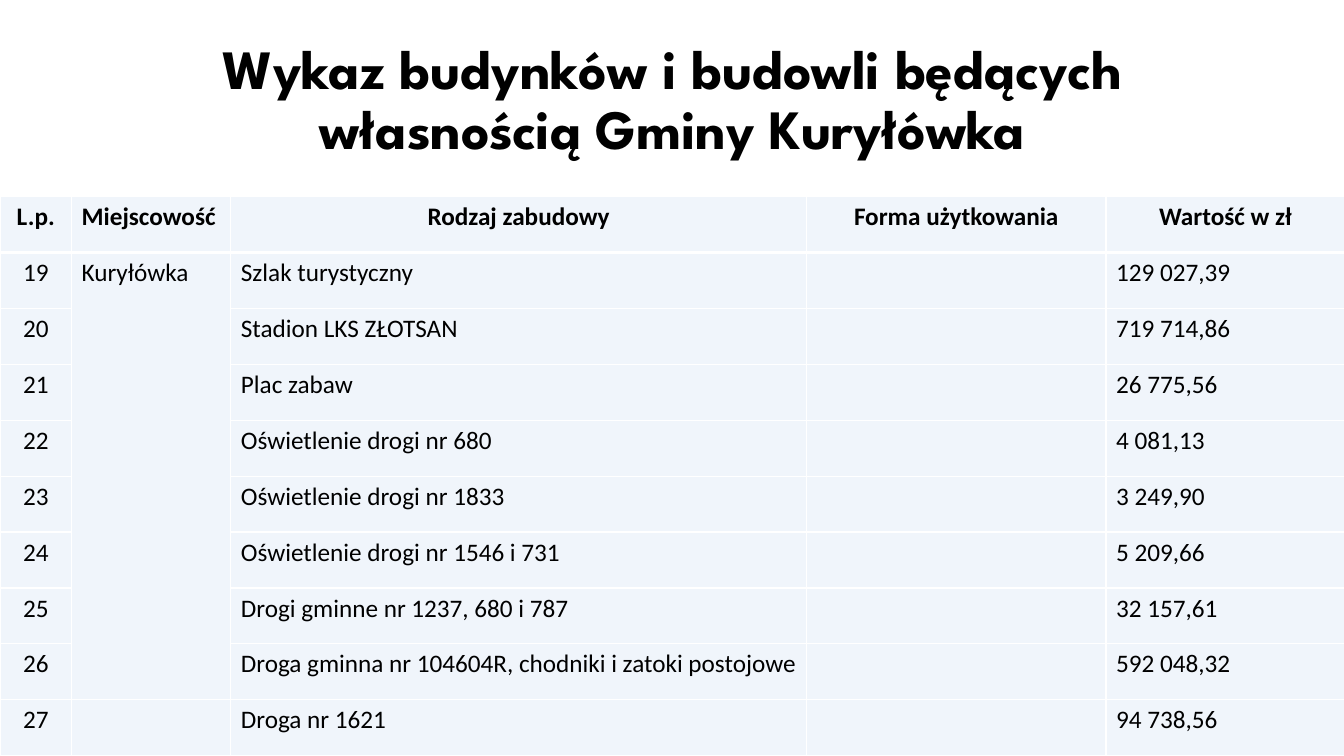
from lxml.etree import SubElement
from pptx import Presentation
from pptx.dml.color import RGBColor
from pptx.enum.text import MSO_ANCHOR, PP_ALIGN
from pptx.oxml.ns import qn
from pptx.util import Inches, Pt


def write(tf, text, size=18, font="Calibri", color="000000", bold=False,
          align=PP_ALIGN.LEFT, spacing=None):
    p = tf.paragraphs[0]
    p.alignment = align
    p.line_spacing = spacing
    r = p.add_run()
    r.text = text
    r.font.size = Pt(size)
    r.font.name = font
    r.font.bold = bold
    r.font.color.rgb = RGBColor.from_string(color)


def style_cell(cell, fill, alpha, border, bottom_width):
    tc_pr = cell._tc.get_or_add_tcPr()
    for side in ("L", "R", "T", "B"):
        width = bottom_width if side == "B" else 1
        ln = SubElement(tc_pr, qn(f"a:ln{side}"), w=str(Pt(width)))
        solid = SubElement(ln, qn("a:solidFill"))
        SubElement(solid, qn("a:srgbClr"), val=border)
    solid = SubElement(tc_pr, qn("a:solidFill"))
    clr = SubElement(solid, qn("a:srgbClr"), val=fill)
    SubElement(clr, qn("a:alpha"), val=str(alpha * 1000))


prs = Presentation()
prs.slide_width = Inches(13.33)
prs.slide_height = Inches(7.5)
s = prs.slides.add_slide(prs.slide_layouts[6])

title = s.shapes.add_textbox(Inches(0.92), Inches(0.28), Inches(11.5), Inches(1.45))
tf = title.text_frame
tf.word_wrap = True
tf.vertical_anchor = MSO_ANCHOR.MIDDLE
write(tf, "Wykaz budynków i budowli będących własnością Gminy Kuryłówka",
      size=39.6, font="League Spartan", bold=True, align=PP_ALIGN.CENTER, spacing=0.9)

headers = ["L.p.", "Miejscowość", "Rodzaj zabudowy", "Forma użytkowania", "Wartość w zł"]
widths = [0.71, 1.58, 5.71, 2.97, 2.37]
first_number = 19
buildings = [
    ("Szlak turystyczny", "129 027,39"),
    ("Stadion LKS ZŁOTSAN", "719 714,86"),
    ("Plac zabaw", "26 775,56"),
    ("Oświetlenie drogi nr 680", "4 081,13"),
    ("Oświetlenie drogi nr 1833", "3 249,90"),
    ("Oświetlenie drogi nr 1546 i 731", "5 209,66"),
    ("Drogi gminne nr 1237, 680 i 787", "32 157,61"),
    ("Droga gminna nr 104604R, chodniki i zatoki postojowe", "592 048,32"),
    ("Droga nr 1621", "94 738,56"),
]
rows = [headers]
for number, (kind, value) in enumerate(buildings, first_number):
    place = "Kuryłówka" if number == first_number else ""
    rows.append([str(number), place, kind, "", value])

table = s.shapes.add_table(len(rows), len(headers), Inches(0), Inches(1.95),
                           Inches(13.33), Inches(5.55)).table
table.first_row = False
table.horz_banding = False
for column, width in zip(table.columns, widths):
    column.width = Inches(width)

for i, row in enumerate(rows):
    for j, text in enumerate(row):
        cell = table.cell(i, j)
        style_cell(cell, "5B9BD5", 9, "FFFFFF", 3 if i == 0 else 1)
        centered = j == 0 or (i == 0 and j != 1)
        if text:
            write(cell.text_frame, text, bold=i == 0,
                  align=PP_ALIGN.CENTER if centered else PP_ALIGN.LEFT)
table.cell(1, 1).merge(table.cell(8, 1))

prs.save("out.pptx")
